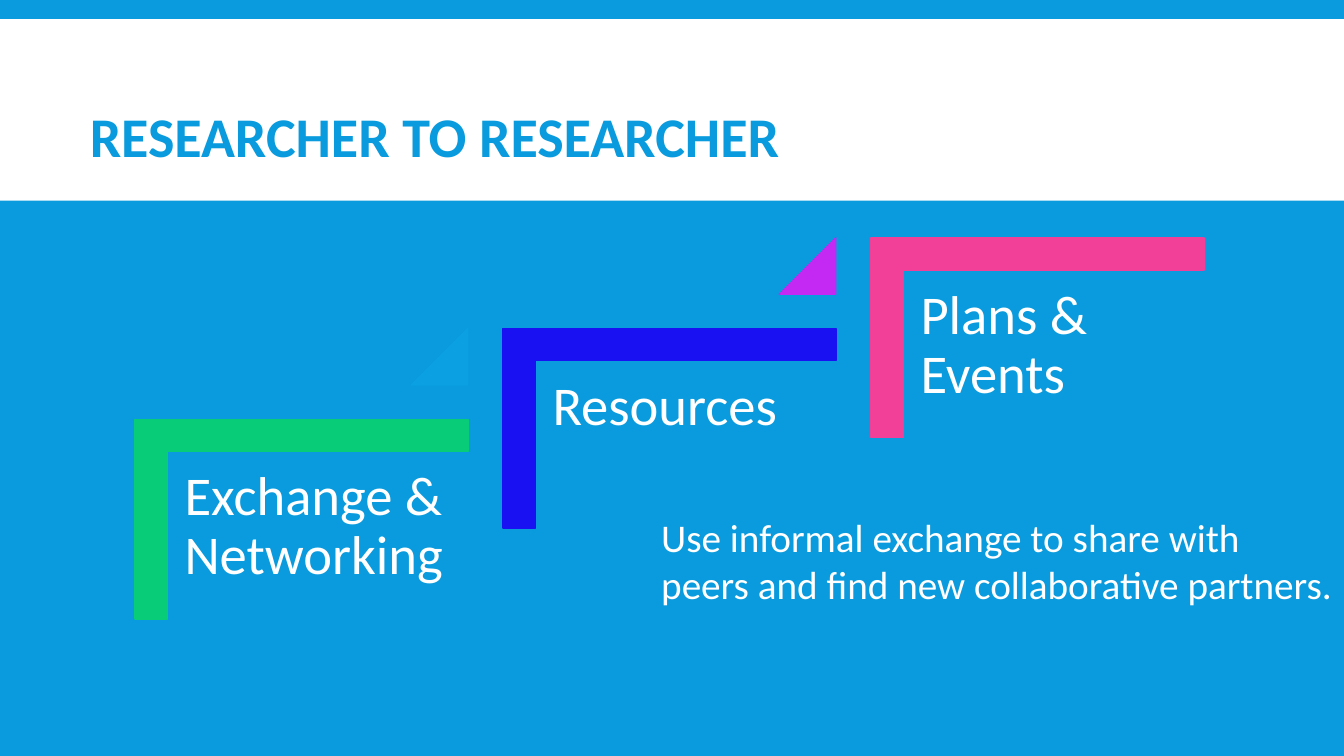
from pptx import Presentation
from pptx.dml.color import RGBColor
from pptx.enum.shapes import MSO_SHAPE
from pptx.enum.text import MSO_ANCHOR, MSO_AUTO_SIZE, PP_ALIGN
from pptx.util import Inches, Pt

BLUE, WHITE = "099BDD", "FFFFFF"
FONT = "Calibri"

# Staircase: first bracket's corner, the move to the next one, and its size
START_X, START_Y = 1.34, 4.16
STEP_X, STEP_Y = 3.65, -0.9
BRACKET_W, BRACKET_H = 3.3, 1.98
BAR = 0.33
TRIANGLE = 0.56

STEPS = [
    ("Exchange & Networking", "08CC78", "0AA0E1"),
    ("Resources", "1911F2", "C329F2"),
    ("Plans & Events", "F24099", None),
]


def rgb(color):
    return RGBColor.from_string(color)


def add_filled(s, kind, x, y, w, h, color, adjustments=(), line=True):
    sp = s.shapes.add_shape(kind, Inches(x), Inches(y), Inches(w), Inches(h))
    sp.shadow.inherit = False
    sp.fill.solid()
    sp.fill.fore_color.rgb = rgb(color)
    if line:
        sp.line.color.rgb = rgb(color)
        sp.line.width = Pt(1)
    else:
        sp.line.fill.background()
    for i, value in enumerate(adjustments):
        sp.adjustments[i] = value
    return sp


def write(tf, text, size, color, spacing=1.0, bold=False):
    tf.word_wrap = True
    p = tf.paragraphs[0]
    p.alignment = PP_ALIGN.LEFT
    p.line_spacing = spacing
    r = p.add_run()
    r.text = text
    r.font.name = FONT
    r.font.size = Pt(size)
    r.font.bold = bold
    r.font.color.rgb = rgb(color)


def add_text(s, text, x, y, w, h, size, spacing=1.0, inset=None):
    tf = s.shapes.add_textbox(Inches(x), Inches(y), Inches(w), Inches(h)).text_frame
    write(tf, text, size, WHITE, spacing)
    if inset is not None:
        tf.margin_left = tf.margin_right = Inches(inset)
        tf.margin_top = tf.margin_bottom = Inches(inset)


def add_title(s, text):
    """Set the title on a white band that spans the slide."""
    band = add_filled(s, MSO_SHAPE.RECTANGLE, 0, 0.19, 13.33, 1.8, WHITE, line=False)
    title = s.shapes.title
    band.element.addnext(title.element)
    title.left, title.top = Inches(0.79), Inches(0.64)
    title.width, title.height = Inches(10.46), Inches(1.5)
    tf = title.text_frame
    tf.auto_size = MSO_AUTO_SIZE.NONE
    tf.vertical_anchor = MSO_ANCHOR.MIDDLE
    write(tf, text, 40, BLUE, 0.85, bold=True)


def add_step(s, index, label, color, triangle_color):
    x, y = START_X + index * STEP_X, START_Y + index * STEP_Y
    # The corner shape is turned a quarter about its centre
    shift = (BRACKET_W - BRACKET_H) / 2
    bracket = add_filled(s, MSO_SHAPE.CORNER, x + shift, y - shift,
                         BRACKET_H, BRACKET_W, color, (0.161, 0.161))
    bracket.rotation = 90
    add_text(s, label, x + BAR, y + BAR, 2.98, 2.61, 39, 0.9, 0.16)
    if triangle_color:
        add_filled(s, MSO_SHAPE.ISOSCELES_TRIANGLE, x + BRACKET_W - TRIANGLE,
                   y + STEP_Y, TRIANGLE, TRIANGLE, triangle_color, (1,))


def main():
    prs = Presentation()
    prs.slide_width, prs.slide_height = Inches(13.33), Inches(7.5)
    s = prs.slides.add_slide(prs.slide_layouts.get_by_name("Title Only"))
    s.background.fill.solid()
    s.background.fill.fore_color.rgb = rgb(BLUE)

    add_title(s, "RESEARCHER TO RESEARCHER")
    for index, step in enumerate(STEPS):
        add_step(s, index, *step)
    add_text(s, "Use informal exchange to share with peers and find new "
             "collaborative partners.", 6.46, 5.04, 6.87, 1.51, 28)
    prs.save("out.pptx")


if __name__ == "__main__":
    main()
